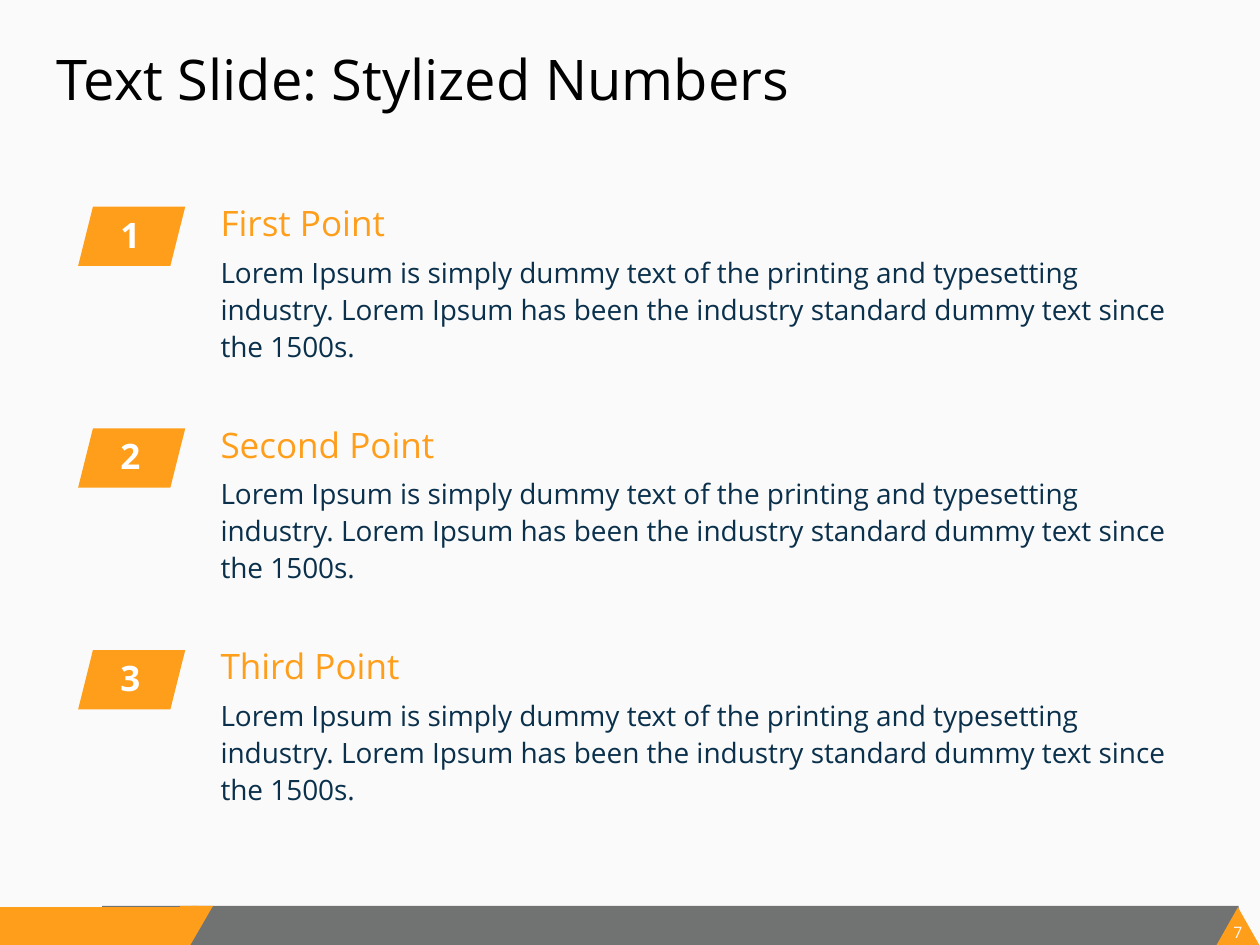
from pptx import Presentation
from pptx.dml.color import RGBColor
from pptx.enum.shapes import MSO_SHAPE
from pptx.enum.text import MSO_ANCHOR, MSO_AUTO_SIZE, PP_ALIGN
from pptx.util import Inches, Pt

ORANGE = RGBColor(0xFF, 0x9E, 0x1B)
GRAY = RGBColor(0x70, 0x73, 0x72)
NAVY = RGBColor(0x0A, 0x30, 0x4B)
BLACK = RGBColor(0, 0, 0)
WHITE = RGBColor(0xFF, 0xFF, 0xFF)
PAPER = RGBColor(0xFA, 0xFA, 0xFA)
FONT = "Open Sans"

DESCRIPTION = (
    "Lorem Ipsum is simply dummy text of the printing and typesetting industry. "
    "Lorem Ipsum has been the industry standard dummy text since the 1500s."
)
POINTS = ["First Point", "Second Point", "Third Point"]
POINT_PITCH = 1.76


def write(shape, text, size, color, insets=(0, 0, 0, 0), line_spacing=None):
    """Fill a shape with one styled paragraph and return the paragraph."""
    frame = shape.text_frame
    frame.margin_left, frame.margin_top, frame.margin_right, frame.margin_bottom = map(
        Inches, insets
    )
    frame.word_wrap = True
    frame.text = text
    paragraph = frame.paragraphs[0]
    paragraph.line_spacing = line_spacing
    paragraph.font.name = FONT
    paragraph.font.size = Pt(size)
    paragraph.font.color.rgb = color
    return paragraph


def add_plain_shape(shapes, kind, left, top, width, height, color):
    """Add a flat shape without outline or shadow."""
    shape = shapes.add_shape(
        kind, Inches(left), Inches(top), Inches(width), Inches(height)
    )
    shape.shadow.inherit = False
    shape.fill.solid()
    shape.fill.fore_color.rgb = color
    shape.line.fill.background()
    return shape


def add_text(shapes, left, top, width, height, text, size, color, line_spacing):
    """Add a growing text box and return its frame."""
    box = shapes.add_textbox(Inches(left), Inches(top), Inches(width), Inches(height))
    write(box, text, size, color, (0.2, 0.05, 0.03, 0.05), line_spacing)
    box.text_frame.auto_size = MSO_AUTO_SIZE.SHAPE_TO_FIT_TEXT
    return box.text_frame


def add_title(slide, left, top, width, height):
    """Place the slide title."""
    title = slide.shapes.title
    title.left, title.top = Inches(left), Inches(top)
    title.width, title.height = Inches(width), Inches(height)
    paragraph = write(
        title, "Text Slide: Stylized Numbers", 32, BLACK, (0.1, 0.05, 0.1, 0.05)
    )
    paragraph.alignment = PP_ALIGN.LEFT
    title.text_frame.vertical_anchor = MSO_ANCHOR.TOP


def add_point(slide, left, top, number, heading):
    """Add a numbered badge with its heading and description as a group."""
    shapes = slide.shapes.add_group_shape().shapes
    text_left = left + 0.93
    heading_frame = add_text(
        shapes, text_left, top, 7.61, 0.41, heading, 20, ORANGE, 0.9
    )
    heading_frame.vertical_anchor = MSO_ANCHOR.MIDDLE
    add_text(
        shapes, text_left, top + 0.37, 7.88, 0.69, DESCRIPTION, 16, NAVY, 1.1
    )
    badge = add_plain_shape(
        shapes, MSO_SHAPE.PARALLELOGRAM, left, top + 0.06, 0.85, 0.47, ORANGE
    )
    paragraph = write(
        badge, str(number), 20, WHITE, (0.07, 0.04, 0.2, 0.07), Pt(23.8)
    )
    paragraph.font.bold = True
    paragraph.alignment = PP_ALIGN.CENTER
    paragraph._p.get_or_add_pPr().set("marL", str(Inches(0.11)))
    badge.text_frame.vertical_anchor = MSO_ANCHOR.MIDDLE


def add_footer(slide, top, height, page):
    """Draw the footer band with its slanted tab and page number."""
    shapes = slide.shapes
    add_plain_shape(shapes, MSO_SHAPE.RECTANGLE, 0.81, top, 9.02, height, GRAY)
    add_plain_shape(shapes, MSO_SHAPE.RECTANGLE, 0, top + 0.01, 1.5, height, ORANGE)
    add_plain_shape(
        shapes, MSO_SHAPE.ISOSCELES_TRIANGLE, 9.65, top + 0.01, 0.35, height, ORANGE
    )
    page_box = shapes.add_textbox(
        Inches(9.74), Inches(top + 0.13), Inches(0.17), Inches(0.15)
    )
    write(page_box, str(page), 9, PAPER).alignment = PP_ALIGN.CENTER
    page_box.text_frame.word_wrap = False
    slant = add_plain_shape(
        shapes, MSO_SHAPE.PARALLELOGRAM, 1.34, top, 0.35, height, ORANGE
    )
    slant.adjustments[0] = 0.58
    slant.rotation = 180
    add_plain_shape(shapes, MSO_SHAPE.RECTANGLE, 1.43, top, 0.14, 0.13, ORANGE)


def main():
    """Build and save the slide."""
    presentation = Presentation()
    presentation.slide_width, presentation.slide_height = Inches(10), Inches(7.5)
    slide = presentation.slides.add_slide(presentation.slide_layouts[5])
    slide.background.fill.solid()
    slide.background.fill.fore_color.rgb = PAPER
    add_footer(slide, 7.19, 0.31, 7)
    add_title(slide, 0.35, 0.3, 9.24, 1.25)
    for index, heading in enumerate(POINTS):
        add_point(slide, 0.62, 1.58 + index * POINT_PITCH, index + 1, heading)
    presentation.save("out.pptx")


if __name__ == "__main__":
    main()
